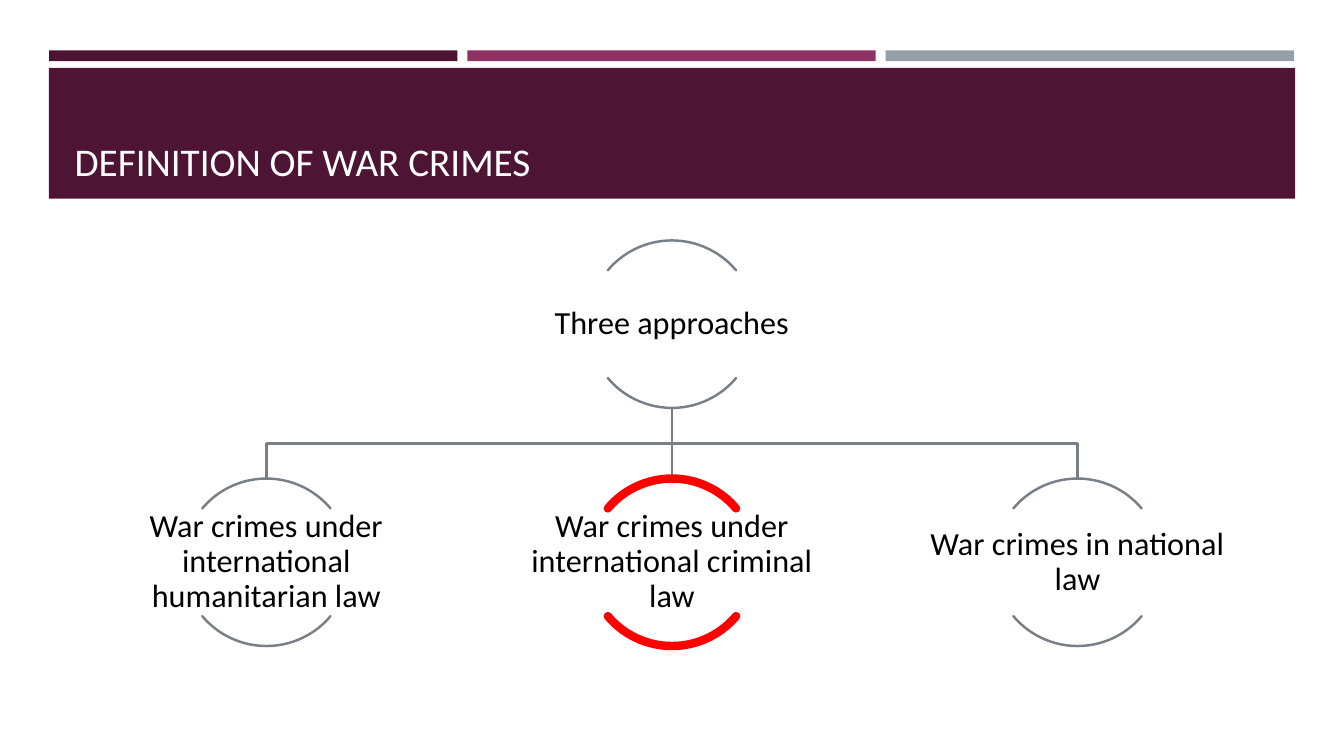
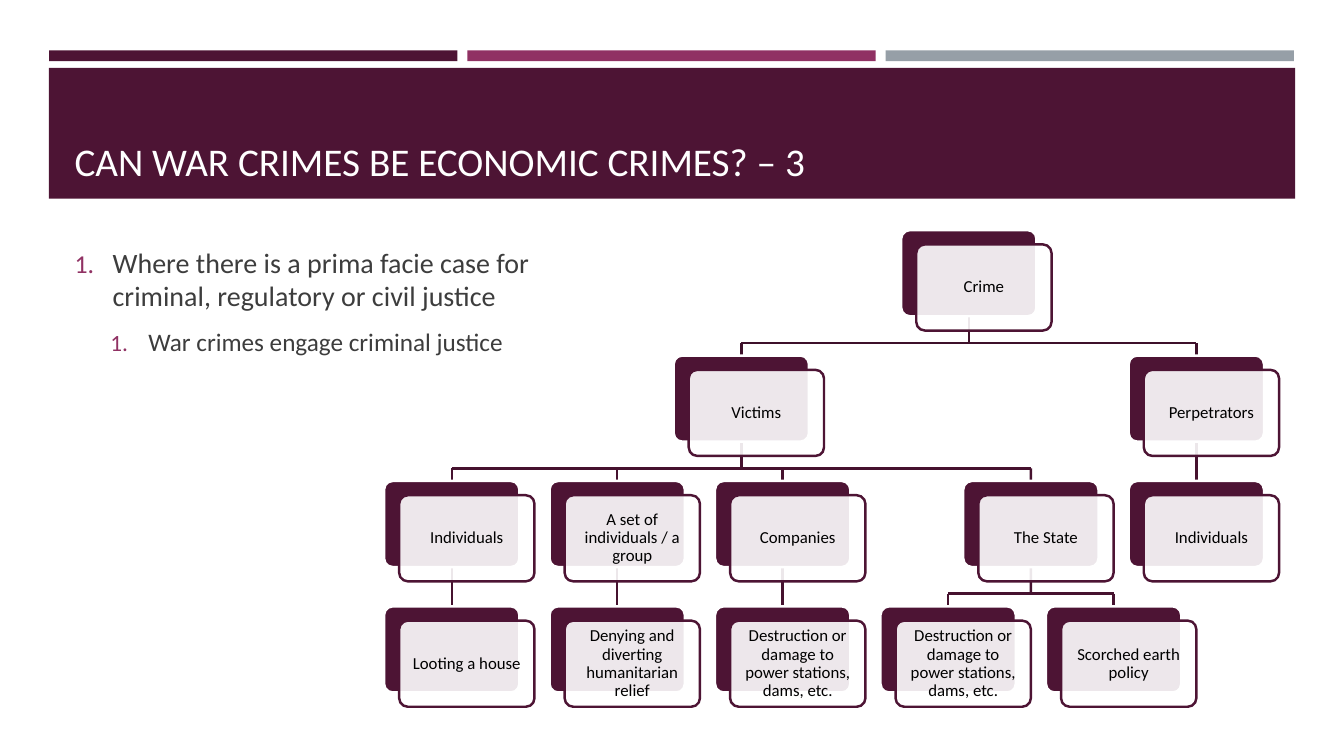
from dataclasses import dataclass

from lxml.etree import SubElement
from pptx import Presentation
from pptx.dml.color import RGBColor
from pptx.enum.shapes import MSO_CONNECTOR, MSO_SHAPE
from pptx.enum.text import MSO_ANCHOR, MSO_AUTO_SIZE, PP_ALIGN
from pptx.oxml.ns import qn
from pptx.util import Cm, Pt

APPROACHES_TITLE = "DEFINITION OF WAR CRIMES"
APPROACHES_ROOT = "Three approaches"
APPROACHES = [
    ("War crimes under international humanitarian law", False),
    ("War crimes under international criminal law", True),
    ("War crimes in national law", False),
]

CRIMES_TITLE = "CAN WAR CRIMES BE ECONOMIC CRIMES? – 3"
CRIMES_POINTS = [
    (0, "Where there is a prima facie case for criminal, regulatory or civil justice"),
    (1, "War crimes engage criminal justice"),
]
POWER_DAMAGE = "Destruction or damage to power stations, dams, etc."
CRIME_TREE = ("Crime", [
    ("Victims", [
        ("Individuals", [("Looting a house", [])]),
        ("A set of individuals / a group", [("Denying and diverting humanitarian relief", [])]),
        ("Companies", [(POWER_DAMAGE, [])]),
        ("The State", [(POWER_DAMAGE, []), ("Scorched earth policy", [])]),
    ]),
    ("Perpetrators", [("Individuals", [])]),
])


@dataclass(frozen=True)
class Theme:
    font: str = "Calibri"
    plum: RGBColor = RGBColor(0x4D, 0x14, 0x34)
    berry: RGBColor = RGBColor(0x90, 0x31, 0x63)
    steel: RGBColor = RGBColor(0x96, 0x9F, 0xA7)
    slate: RGBColor = RGBColor(0x78, 0x7F, 0x86)
    red: RGBColor = RGBColor(0xFF, 0x00, 0x00)
    white: RGBColor = RGBColor(0xFF, 0xFF, 0xFF)
    black: RGBColor = RGBColor(0x00, 0x00, 0x00)
    body: RGBColor = RGBColor(0x3D, 0x3D, 0x3D)
    root_line: RGBColor = RGBColor(0x3E, 0x10, 0x2A)
    branch_line: RGBColor = RGBColor(0x46, 0x12, 0x2F)
    title_size: float = 28
    point_sizes: tuple = (20, 18)
    approach_size: float = 23
    node_size: float = 12
    thin: float = 1.75
    thick: float = 6


T = Theme()
SLIDE_W, SLIDE_H = 33.87, 19.05
CIRCLE, CIRCLE_STEP = 4.22, 10.22
CIRCLE_TOPS = (6.06, 12.06)
LABEL_W, LABEL_H = 8.43, 2.68
NODE_W, NODE_H = 3.41, 2.17
NODE_X, NODE_Y, NODE_STEP, LEVEL_STEP = 9.68, 5.8, 4.17, 3.16
FRONT_DX, FRONT_DY = 0.38, 0.36
BUS_DROP = 0.67


def apply(obj, values):
    for name, value in values.items():
        setattr(obj, name, value)


def cm(*values):
    return [Cm(v) for v in values]


def add_run(p, text, size, color):
    r = p.add_run()
    r.text = text
    apply(r.font, {"name": T.font, "size": Pt(size)})
    r.font.color.rgb = color


def frame(tf, inset, anchor):
    apply(tf, {"word_wrap": True, "auto_size": MSO_AUTO_SIZE.NONE, "vertical_anchor": anchor})
    sides = ("margin_left", "margin_top", "margin_right", "margin_bottom")
    apply(tf, dict.fromkeys(sides, Cm(inset)))


def center_text(tf, text, size, inset):
    frame(tf, inset, MSO_ANCHOR.MIDDLE)
    p = tf.paragraphs[0]
    apply(p, {"alignment": PP_ALIGN.CENTER, "line_spacing": 0.9})
    add_run(p, text, size, T.black)


def add_box(s, kind, at, fill=None, line=None, width=T.thin):
    sp = s.shapes.add_shape(kind, *cm(*at))
    sp.shadow.inherit = False
    if fill is None:
        sp.fill.background()
    else:
        sp.fill.solid()
        sp.fill.fore_color.rgb = fill
    if line is None:
        sp.line.fill.background()
    else:
        sp.line.color.rgb = line
        sp.line.width = Pt(width)
    return sp


def add_line(s, start, end, color, parent=None, child=None):
    ln = s.shapes.add_connector(MSO_CONNECTOR.STRAIGHT, *cm(*start, *end))
    if parent is not None:
        ln.begin_connect(parent, 2)
    if child is not None:
        ln.end_connect(child, 0)
    ln.line.color.rgb = color
    ln.line.width = Pt(T.thin)
    SubElement(ln.element.spPr, qn("a:effectLst"))
    s.shapes.element.insert(2, ln.element)


def add_branch(s, x, top, bus, bottom, children, color, parent=None):
    if len(children) == 1:
        child_x, child = children[0]
        add_line(s, (x, top), (child_x, bottom), color, parent, child)
        return
    add_line(s, (x, top), (x, bus), color, parent)
    add_line(s, (children[0][0], bus), (children[-1][0], bus), color)
    for child_x, child in children:
        add_line(s, (child_x, bus), (child_x, bottom), color, None, child)


def move_bands_to_layout(s, layout):
    bands = [((1.24 + 10.54 * i, 1.27, 10.29, 0.27), color)
             for i, color in enumerate((T.plum, T.berry, T.steel))]
    bands.append(((1.23, 1.71, 31.41, 3.3), T.plum))
    for at, color in bands:
        sp = add_box(s, MSO_SHAPE.RECTANGLE, at, color)
        layout.shapes.element.insert(2, sp.element)


def add_slide(prs, layout, title):
    s = prs.slides.add_slide(layout)
    sp = s.shapes.title
    apply(sp, dict(zip(("left", "top", "width", "height"), cm(1.63, 1.96, 30.63, 2.82))))
    tf = sp.text_frame
    frame(tf, 0.25, MSO_ANCHOR.BOTTOM)
    apply(tf, {"margin_top": Cm(0.13), "margin_bottom": Cm(0.13)})
    p = tf.paragraphs[0]
    p.alignment = PP_ALIGN.LEFT
    add_run(p, title, T.title_size, T.white)
    return s


def add_approach(s, x, top, text, marked=False):
    color, width = (T.red, T.thick) if marked else (T.slate, T.thin)
    for start, end in ((220, 320), (40, 140)):
        sp = add_box(s, MSO_SHAPE.ARC, (x - CIRCLE / 2, top, CIRCLE, CIRCLE), None, color, width)
        sp.adjustments[0] = start * 0.6
        sp.adjustments[1] = end * 0.6
        sp.element.spPr.find(qn("a:ln")).set("cap", "rnd")
    label_top = top + (CIRCLE - LABEL_H) / 2
    tb = s.shapes.add_textbox(*cm(x - LABEL_W / 2, label_top, LABEL_W, LABEL_H))
    center_text(tb.text_frame, text, T.approach_size, 0.05)


def draw_approaches(s):
    mid = SLIDE_W / 2
    root_top, row_top = CIRCLE_TOPS
    root_bottom = root_top + CIRCLE
    xs = [mid + (i - (len(APPROACHES) - 1) / 2) * CIRCLE_STEP for i in range(len(APPROACHES))]
    add_approach(s, mid, root_top, APPROACHES_ROOT)
    for x, (text, marked) in zip(xs, APPROACHES):
        add_approach(s, x, row_top, text, marked)
    add_branch(s, mid, root_bottom, (root_bottom + row_top) / 2, row_top,
               [(x, None) for x in xs], T.slate)


def add_points(s):
    tb = s.shapes.add_textbox(*cm(1.63, 6.05, 12.93, 10.21))
    tf = tb.text_frame
    tf.word_wrap = True
    for i, (level, text) in enumerate(CRIMES_POINTS):
        p = tf.add_paragraph() if i else tf.paragraphs[0]
        apply(p, {"level": level, "space_before": Pt(4), "space_after": Pt(6)})
        add_run(p, text, T.point_sizes[level], T.body)
        pPr = p._p.get_or_add_pPr()
        pPr.set("marL", str(Cm((0.96, 1.86)[level])))
        pPr.set("indent", str(-Cm(0.96)))
        SubElement(SubElement(pPr, qn("a:buClr")), qn("a:srgbClr")).set("val", str(T.berry))
        SubElement(pPr, qn("a:buSzPct")).set("val", "92000")
        SubElement(pPr, qn("a:buAutoNum")).set("type", "arabicPeriod")


def add_node(s, x, y, text):
    back = add_box(s, MSO_SHAPE.ROUNDED_RECTANGLE, (x, y, NODE_W, NODE_H), T.plum, T.white)
    front = add_box(s, MSO_SHAPE.ROUNDED_RECTANGLE,
                    (x + FRONT_DX, y + FRONT_DY, NODE_W, NODE_H), T.white, T.plum)
    for sp in (back, front):
        sp.adjustments[0] = 0.1
    fill_color = next(front.element.spPr.iter(qn("a:srgbClr")))
    SubElement(fill_color, qn("a:alpha")).set("val", "90000")
    center_text(front.text_frame, text, T.node_size, 0.19)
    return back


def draw_tree(s, node, last, level=0):
    text, children = node
    placed = [draw_tree(s, child, last, level + 1) for child in children]
    if placed:
        col = (placed[0][0] + placed[-1][0]) / 2
    else:
        col = last.get(level, -1) + 1
    last[level] = col
    x, y = NODE_X + col * NODE_STEP, NODE_Y + level * LEVEL_STEP
    sp = add_node(s, x, y, text)
    if placed:
        ends = [(NODE_X + c * NODE_STEP + NODE_W / 2, child) for c, child in placed]
        bottom = y + NODE_H
        color = T.branch_line if level else T.root_line
        add_branch(s, x + NODE_W / 2, bottom, bottom + BUS_DROP, y + LEVEL_STEP, ends, color, sp)
    return col, sp


def main():
    prs = Presentation()
    apply(prs, {"slide_width": Cm(SLIDE_W), "slide_height": Cm(SLIDE_H)})
    layout = prs.slide_layouts[5]

    s = add_slide(prs, layout, APPROACHES_TITLE)
    move_bands_to_layout(s, layout)
    draw_approaches(s)

    s = add_slide(prs, layout, CRIMES_TITLE)
    add_points(s)
    draw_tree(s, CRIME_TREE, {})

    prs.save("out.pptx")


if __name__ == "__main__":
    main()
